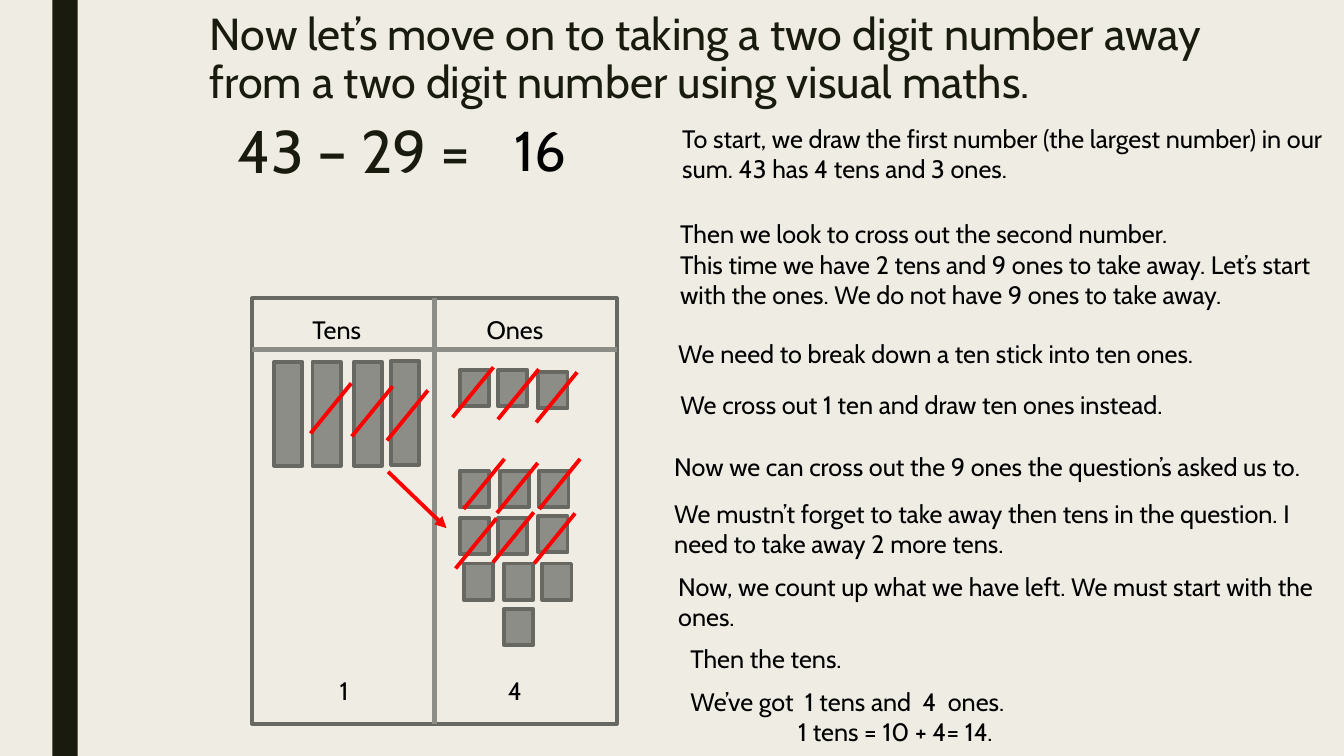
"""Build a slide that works through 43 – 29 with tens sticks and ones squares."""
from dataclasses import dataclass
from typing import Optional

from lxml import etree
from pptx import Presentation
from pptx.dml.color import RGBColor
from pptx.enum.shapes import MSO_CONNECTOR, MSO_SHAPE
from pptx.enum.text import MSO_ANCHOR, MSO_AUTO_SIZE, PP_ALIGN
from pptx.oxml.ns import qn
from pptx.util import Inches, Pt

RECTANGLE = MSO_SHAPE.RECTANGLE
STRAIGHT = MSO_CONNECTOR.STRAIGHT
TOP = MSO_ANCHOR.TOP
LEFT = PP_ALIGN.LEFT
FIXED, GROW = MSO_AUTO_SIZE.NONE, MSO_AUTO_SIZE.SHAPE_TO_FIT_TEXT
TOP_SIDE, BOTTOM_SIDE = 0, 2

COLUMNS, ROWS = 133.33, 75
CELL = Inches(0.1)
FONT = "Cabin"
PAPER, DARK, BLACK = "EFEDE3", "191B0E", "000000"
GREY, OUTLINE, RED = "8C8D86", "686863", "FF0000"
TENS_SIZE, ONES_SIZE, SLASH_SIZE = (2.8, 10.3), (2.9, 3.6), (4.05, 4.97)


@dataclass(frozen=True)
class Counter:
    """A counting block and, if it is crossed out, the foot of its slash."""
    left: float
    top: float
    slash: Optional[tuple[float, float]] = None


@dataclass(frozen=True)
class Caption:
    """Body text in a box on the grid."""
    left: float
    top: float
    width: float
    height: float
    lines: tuple[str, ...]
    last_indent: float = 0
    size: float = 18


TENS = (
    Counter(27.2, 35.9),
    Counter(31, 35.9, (30.8, 43)),
    Counter(35.1, 35.9, (34.9, 43.3)),
    Counter(38.8, 35.8, (38.4, 43.7)),
)
ONES = (
    Counter(45.6, 36.7, (44.9, 41.4)),
    Counter(49.4, 36.7, (49.4, 41.6)),
    Counter(53.4, 36.9, (53.2, 41.9)),
    Counter(45.6, 46.7, (46, 50.5)),
    Counter(49.6, 46.7, (49.3, 50.9)),
    Counter(53.5, 46.7, (53.5, 50.5)),
    Counter(45.6, 51.4, (45.2, 56.4)),
    Counter(49.4, 51.4, (48.9, 55.8)),
    Counter(53.4, 51.2, (53, 55.9)),
    Counter(46, 55.9),
    Counter(50, 55.9),
    Counter(53.8, 55.9),
    Counter(50, 60.4),
)
CAPTIONS = (
    Caption(30, 30.7, 15.6, 4, ("Tens",)),
    Caption(47.3, 30.7, 15.6, 4, ("Ones",)),
    Caption(32.7, 66.5, 4.6, 4, ("1",)),
    Caption(49.4, 66.5, 4.6, 4, ("4",)),
    Caption(50.1, 11, 12.8, 7.7, ("16",), size=40),
    Caption(66.7, 11.7, 67.4, 7.1, (
        "To start, we draw the first number (the largest number) in our sum. "
        "43 has 4 tens and 3 ones.",)),
    Caption(66.5, 21.2, 67.4, 10.1, (
        "Then we look to cross out the second number.",
        "This time we have 2 tens and 9 ones to take away. Let’s start with "
        "the ones. We do not have 9 ones to take away.")),
    Caption(66.3, 33.1, 65.2, 4, ("We need to break down a ten stick into ten ones.",)),
    Caption(66.5, 38.1, 65.2, 4, ("We cross out 1 ten and draw ten ones instead.",)),
    Caption(65.9, 44.3, 65.9, 4, (
        "Now we can cross out the 9 ones the question’s asked us to.",)),
    Caption(65.9, 48.9, 65.9, 7.1, (
        "We mustn’t forget to take away then tens in the question. "
        "I need to take away 2 more tens.",)),
    Caption(66.3, 56.2, 66.3, 7.1, (
        "Now, we count up what we have left. We must start with the ones.",)),
    Caption(67.5, 63.3, 64.5, 4, ("Then the tens.",)),
    Caption(67.5, 67.6, 55.6, 7.1, (
        "We’ve got  1 tens and  4  ones.", "1 tens = 10 + 4= 14."), last_indent=10.7),
)


def cells(*counts: float) -> list[int]:
    """Convert grid counts to slide lengths."""
    return [round(count * CELL) for count in counts]


def colour(value: str) -> RGBColor:
    """Convert a hex string to a colour."""
    return RGBColor.from_string(value)


def write(shape, *lines: str, size: float = 18, ink: str = BLACK,
          spacing: Optional[float] = None, fit=GROW, last_indent: float = 0) -> None:
    """Write one paragraph for each line into a shape."""
    frame = shape.text_frame
    frame.word_wrap, frame.auto_size, frame.vertical_anchor = True, fit, TOP
    frame.text = "\n".join(lines)
    for paragraph in frame.paragraphs:
        paragraph.alignment = LEFT
        if spacing:
            paragraph.line_spacing = spacing
        font = paragraph.runs[0].font
        font.name, font.size = FONT, Pt(size)
        font.color.rgb = colour(ink)
    if last_indent:
        frame.paragraphs[-1]._p.get_or_add_pPr().set("marL", str(cells(last_indent)[0]))


def add_rectangle(slide, left: float, top: float, width: float, height: float,
                  fill: Optional[str] = GREY, outline: Optional[str] = OUTLINE):
    """Draw a rectangle on the grid."""
    rectangle = slide.shapes.add_shape(RECTANGLE, *cells(left, top, width, height))
    rectangle.shadow.inherit = False
    if fill:
        rectangle.fill.solid()
        rectangle.fill.fore_color.rgb = colour(fill)
    else:
        rectangle.fill.background()
    if outline:
        rectangle.line.color.rgb = colour(outline)
        rectangle.line.width = Pt(2.75)
    else:
        rectangle.line.fill.background()
    return rectangle


def add_line(slide, start: tuple[float, float], end: tuple[float, float],
             ink: str = RED, width: float = 2.75, arrow: bool = False):
    """Draw a straight line on the grid."""
    line = slide.shapes.add_connector(STRAIGHT, *cells(*start, *end))
    line.line.color.rgb = colour(ink)
    line.line.width = Pt(width)
    if arrow:
        etree.SubElement(line.line._get_or_add_ln(), qn("a:tailEnd"), type="triangle")
    etree.SubElement(line._element.spPr, qn("a:effectLst"))
    return line


def add_counters(slide, counters: tuple[Counter, ...], size: tuple[float, float]) -> None:
    """Draw blocks, then the slashes that cross them out."""
    for counter in counters:
        add_rectangle(slide, counter.left, counter.top, *size)
    for counter in counters:
        if counter.slash:
            left, bottom = counter.slash
            add_line(slide, counter.slash, (left + SLASH_SIZE[0], bottom - SLASH_SIZE[1]))


def add_place_value_table(slide) -> None:
    """Draw the frame that holds the tens and the ones."""
    left, top, width, height = 25, 29.6, 36.2, 42.2
    frame = add_rectangle(slide, left, top, width, height, fill=None)
    middle, header = left + width / 2, top + 5.1
    divider = add_line(slide, (middle, top), (middle, top + height), GREY, 3.75)
    divider.begin_connect(frame, TOP_SIDE)
    divider.end_connect(frame, BOTTOM_SIDE)
    add_line(slide, (left, header), (left + width, header), GREY, 3.75)


def main() -> None:
    """Build and save the slide."""
    deck = Presentation()
    deck.slide_width, deck.slide_height = cells(COLUMNS, ROWS)
    slide = deck.slides.add_slide(deck.slide_layouts[5])
    slide.background.fill.solid()
    slide.background.fill.fore_color.rgb = colour(PAPER)
    add_rectangle(slide, 5.2, 0, 2.5, ROWS, fill=DARK, outline=None)

    title = slide.shapes.title
    title.left, title.top, title.width, title.height = cells(19.8, 0.7, 105, 16.2)
    write(title, "Now let’s move on to taking a two digit number away from a two digit "
          "number using visual maths.", size=32, ink=DARK, spacing=0.89, fit=FIXED)
    equation = slide.shapes.add_textbox(*cells(22.6, 12.2, 105, 6.7))
    write(equation, "43 – 29 =", size=42.9, ink=DARK, spacing=0.79, fit=FIXED)

    add_place_value_table(slide)
    add_counters(slide, TENS, TENS_SIZE)
    add_counters(slide, ONES, ONES_SIZE)
    add_line(slide, (38.5, 46.8), (44.3, 52.4), arrow=True)
    for caption in CAPTIONS:
        box = slide.shapes.add_textbox(
            *cells(caption.left, caption.top, caption.width, caption.height))
        write(box, *caption.lines, size=caption.size, last_indent=caption.last_indent)
    deck.save("out.pptx")


if __name__ == "__main__":
    main()
